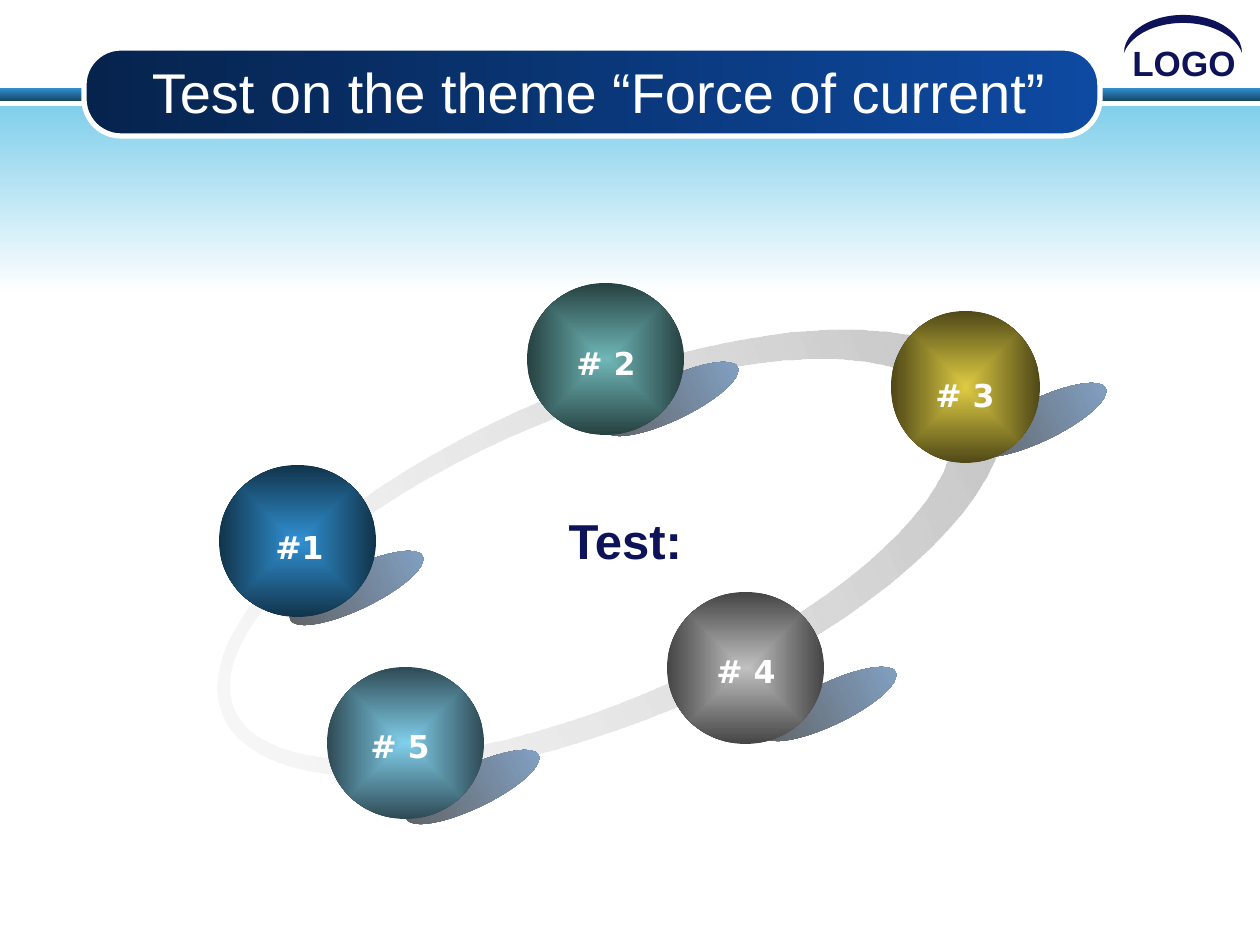
"""Build the slide with five numbered balls on a tilted ring."""
import math

from lxml import etree
from pptx import Presentation
from pptx import util as u
from pptx.dml.color import RGBColor
from pptx.enum import shapes, text
from pptx.oxml.ns import qn

PX = 914400 / 126
SLIDE = (1260, 945)
NAVY, WHITE = "0D1259", "FFFFFF"
TITLE = "Test on the theme “Force of current”"

# label, label box, ball box, colour, shadow corner
BALLS = [
    ("# 2", (564, 338, 87, 50), (527, 283, 157, 152), "6FB7B7", (598, 378)),
    ("#1", (263, 522, 76, 50), (219, 465, 157, 152), "3191D3", (283, 567)),
    ("# 5", (358, 721, 87, 50), (327, 667, 157, 152), "81CFEB", (399, 766)),
    ("# 4", (704, 646, 87, 50), (667, 592, 157, 152), "C0C0C0", (756, 683)),
    ("# 3", (923, 370, 87, 50), (891, 311, 149, 152), "DCCA42", (966, 399)),
]
SHADOW_SIZE, SHADOW_TURN = (147, 42), -25.7
RING_TURN = -22.6
# centre x, centre y, half width, half height
RING_OUTER = (611, 553, 420, 167)
RING_INNER = (591, 551, 387, 144)
RING_STEPS = 80

LIGHT = {"shade": 48}
DEEP = {"shade": 36}


def px(*lengths):
    return [u.Emu(round(n * PX)) for n in lengths]


def rgb(value):
    return RGBColor.from_string(value)


def modify(stop, shade=None, alpha=None):
    colour = stop._gs.find(qn("a:srgbClr"))
    steps = [("gamma", None), ("shade", shade), ("invGamma", None)] if shade else []
    if alpha:
        steps.append(("alpha", alpha))
    for tag, percent in steps:
        node = etree.SubElement(colour, qn("a:" + tag))
        if percent:
            node.set("val", str(percent * 1000))


def gradient(shape, start, end, angle=0, start_mods=None, end_mods=None):
    shape.fill.gradient()
    shape.fill.gradient_angle = angle
    for stop, colour, mods in zip(shape.fill.gradient_stops, (start, end), (start_mods, end_mods)):
        stop.color.rgb = rgb(colour)
        modify(stop, **(mods or {}))


def from_centre(shape):
    grad = shape._element.spPr.find(qn("a:gradFill"))
    grad.remove(grad.find(qn("a:lin")))
    centre = etree.SubElement(grad, qn("a:path"), {"path": "shape"})
    etree.SubElement(centre, qn("a:fillToRect"), dict.fromkeys("ltrb", "50000"))


def plain(shape, turn=0):
    shape.shadow.inherit = False
    shape.line.fill.background()
    shape.rotation = turn
    return shape


def add(slide, kind, box, turn=0):
    return plain(slide.shapes.add_shape(kind, *px(*box)), turn)


def write(slide, words, box, size, colour, font="Arial", bold=True, centred=False, wrap=True):
    frame = slide.shapes.add_textbox(*px(*box)).text_frame
    frame.word_wrap = wrap
    frame.text = words
    frame.vertical_anchor = text.MSO_ANCHOR.MIDDLE if not bold else text.MSO_ANCHOR.TOP
    line = frame.paragraphs[0]
    if centred:
        line.alignment = text.PP_ALIGN.CENTER
    face = line.runs[0].font
    face.name, face.size, face.bold = font, u.Pt(size), bold
    face.color.rgb = rgb(colour)


def oval(cx, cy, rx, ry, way=1):
    angles = [way * math.tau * i / RING_STEPS for i in range(RING_STEPS)]
    return [px(cx + rx * math.cos(a), cy + ry * math.sin(a)) for a in angles]


def add_ring(slide):
    outer, inner = oval(*RING_OUTER), oval(*RING_INNER, way=-1)
    outline = slide.shapes.build_freeform(*outer[0])
    outline.add_line_segments(outer[1:])
    outline.move_to(*inner[0])
    outline.add_line_segments(inner[1:])
    ring = plain(outline.convert_to_shape(), RING_TURN)
    gradient(ring, "EEEEEE", "C0C0C0", start_mods={"alpha": 36})


def add_header(slide):
    kind = shapes.MSO_SHAPE
    gradient(add(slide, kind.RECTANGLE, (0, 88, 1260, 13)), "3191D3", "3191D3", 270, end_mods=LIGHT)
    gradient(add(slide, kind.RECTANGLE, (0, 106, 1260, 188)), "81CFEB", WHITE, 270)
    banner = add(slide, kind.ROUNDED_RECTANGLE, (84, 48, 1016, 88))
    banner.adjustments[0] = 0.42
    gradient(banner, "0E4AA2", "0E4AA2", start_mods=LIGHT)
    banner.line.color.rgb = rgb(WHITE)
    banner.line.width = u.Pt(3)
    write(slide, "LOGO", (1120, 35, 136, 54), 20, NAVY)
    arc = add(slide, kind.MOON, (1164, -25, 38, 118), 90)
    arc.adjustments[0] = 0.21
    arc.fill.solid()
    arc.fill.fore_color.rgb = rgb(NAVY)
    write(slide, TITLE, (116, 52, 966, 78), 32, WHITE, bold=False, centred=True)


def add_balls(slide):
    ellipse = shapes.MSO_SHAPE.OVAL
    for *_, corner in BALLS:
        shadow = add(slide, ellipse, corner + SHADOW_SIZE, SHADOW_TURN)
        gradient(shadow, "5F5F5F", "84A5CA")
    for _, _, box, colour, _ in BALLS:
        ball = add(slide, ellipse, box)
        gradient(ball, colour, colour, end_mods=DEEP)
        from_centre(ball)
    for label, box, *_ in BALLS:
        write(slide, label, box, 18, WHITE, "DejaVu Sans", wrap=False)


def main():
    deck = Presentation()
    deck.slide_width, deck.slide_height = px(*SLIDE)
    slide = deck.slides.add_slide(deck.slide_layouts[6])
    add_header(slide)
    add_ring(slide)
    add_balls(slide)
    write(slide, "Test: ", (473, 504, 318, 72), 28, NAVY, centred=True)
    deck.save("out.pptx")


if __name__ == "__main__":
    main()
